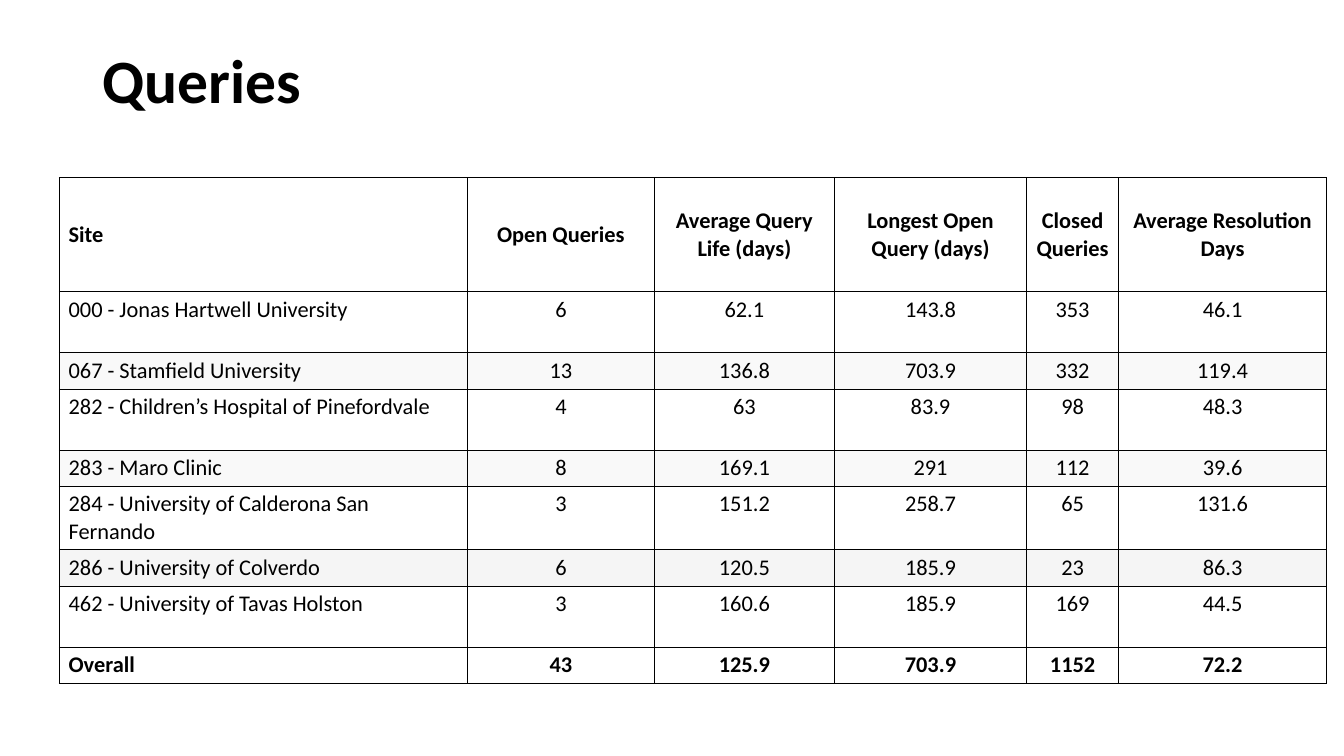
from lxml import etree
from pptx import Presentation
from pptx.dml.color import RGBColor
from pptx.enum.text import MSO_ANCHOR, PP_ALIGN
from pptx.oxml.ns import qn
from pptx.util import Cm, Pt

LEFT, CENTER = PP_ALIGN.LEFT, PP_ALIGN.CENTER
TOP, MIDDLE = MSO_ANCHOR.TOP, MSO_ANCHOR.MIDDLE

FONT = "Calibri"
COLORS = {"text": "000000", "line": "000000", "plain": "FFFFFF",
          "band": "F9F9F9", "dark_band": "F5F5F5"}
COLUMN_WIDTHS = [10.28, 4.71, 4.54, 4.84, 2.32, 5.24]
HEADER_HEIGHT, TALL_HEIGHT, SHORT_HEIGHT = 2.87, 1.54, 0.91
OUTER_LINE, INNER_LINE = 1, 0.6

HEADERS = ["Site", "Open Queries", "Average Query\nLife (days)",
           "Longest Open Query (days)", "Closed Queries",
           "Average Resolution Days"]
SITES = [
    ["000 - Jonas Hartwell University", "6", "62.1", "143.8", "353", "46.1"],
    ["067 - Stamfield University", "13", "136.8", "703.9", "332", "119.4"],
    ["282 - Children’s Hospital of Pinefordvale", "4", "63", "83.9", "98", "48.3"],
    ["283 - Maro Clinic", "8", "169.1", "291", "112", "39.6"],
    ["284 - University of Calderona San Fernando", "3", "151.2", "258.7", "65", "131.6"],
    ["286 - University of Colverdo", "6", "120.5", "185.9", "23", "86.3"],
    ["462 - University of Tavas Holston", "3", "160.6", "185.9", "169", "44.5"],
]
OVERALL = ["Overall", "43", "125.9", "703.9", "1152", "72.2"]
BANDS = {2: "band", 4: "band", 6: "dark_band"}


def add_run(paragraph, text, size, bold):
    run = paragraph.add_run()
    run.text = text
    run.font.name = FONT
    run.font.size = Pt(size)
    run.font.bold = bold
    run.font.color.rgb = RGBColor.from_string(COLORS["text"])


def add_title(slide, text):
    title = slide.shapes.title
    title.left, title.top = Cm(2.33), Cm(0.81)
    title.width, title.height = Cm(29.21), Cm(2.57)
    title.text_frame.vertical_anchor = MIDDLE
    paragraph = title.text_frame.paragraphs[0]
    paragraph.alignment = LEFT
    paragraph.line_spacing = 0.9
    add_run(paragraph, text, 44, True)


def add_borders(cell, top, bottom):
    properties = cell._tc.get_or_add_tcPr()
    widths = {"a:lnL": OUTER_LINE, "a:lnR": OUTER_LINE,
              "a:lnT": top, "a:lnB": bottom}
    for tag, width in widths.items():
        line = etree.SubElement(properties, qn(tag), w=str(Pt(width)))
        fill = etree.SubElement(line, qn("a:solidFill"))
        etree.SubElement(fill, qn("a:srgbClr"), val=COLORS["line"])


def fill_cell(cell, text, alignment, anchor, bold, color):
    cell.margin_left = cell.margin_right = Cm(0.23)
    cell.margin_top = cell.margin_bottom = Cm(0.11)
    cell.vertical_anchor = anchor
    cell.fill.solid()
    cell.fill.fore_color.rgb = RGBColor.from_string(COLORS[color])
    for index, line in enumerate(text.split("\n")):
        frame = cell.text_frame
        paragraph = frame.add_paragraph() if index else frame.paragraphs[0]
        paragraph.alignment = alignment
        add_run(paragraph, line, 16, bold)


def add_query_table(slide, rows):
    last = len(rows) - 1
    heights = [HEADER_HEIGHT] + [TALL_HEIGHT if index % 2 else SHORT_HEIGHT
                                 for index in range(1, len(rows))]
    table = slide.shapes.add_table(
        len(rows), len(COLUMN_WIDTHS), Cm(1.5), Cm(4.48),
        Cm(sum(COLUMN_WIDTHS)), Cm(sum(heights))).table
    table.first_row = table.horz_banding = False
    for column, width in zip(table.columns, COLUMN_WIDTHS):
        column.width = Cm(width)
    for row_index, texts in enumerate(rows):
        table.rows[row_index].height = Cm(heights[row_index])
        is_header = row_index == 0
        is_last = row_index == last
        for column_index, text in enumerate(texts):
            cell = table.cell(row_index, column_index)
            add_borders(cell, OUTER_LINE if is_header else INNER_LINE,
                        OUTER_LINE if is_last else INNER_LINE)
            fill_cell(cell, text, CENTER if column_index else LEFT,
                      MIDDLE if is_header else TOP, is_header or is_last,
                      BANDS.get(row_index, "plain"))


def main():
    presentation = Presentation()
    presentation.slide_width, presentation.slide_height = Cm(33.87), Cm(19.05)
    slide = presentation.slides.add_slide(presentation.slide_layouts[5])
    add_title(slide, "Queries")
    add_query_table(slide, [HEADERS, *SITES, OVERALL])
    presentation.save("out.pptx")


if __name__ == "__main__":
    main()
